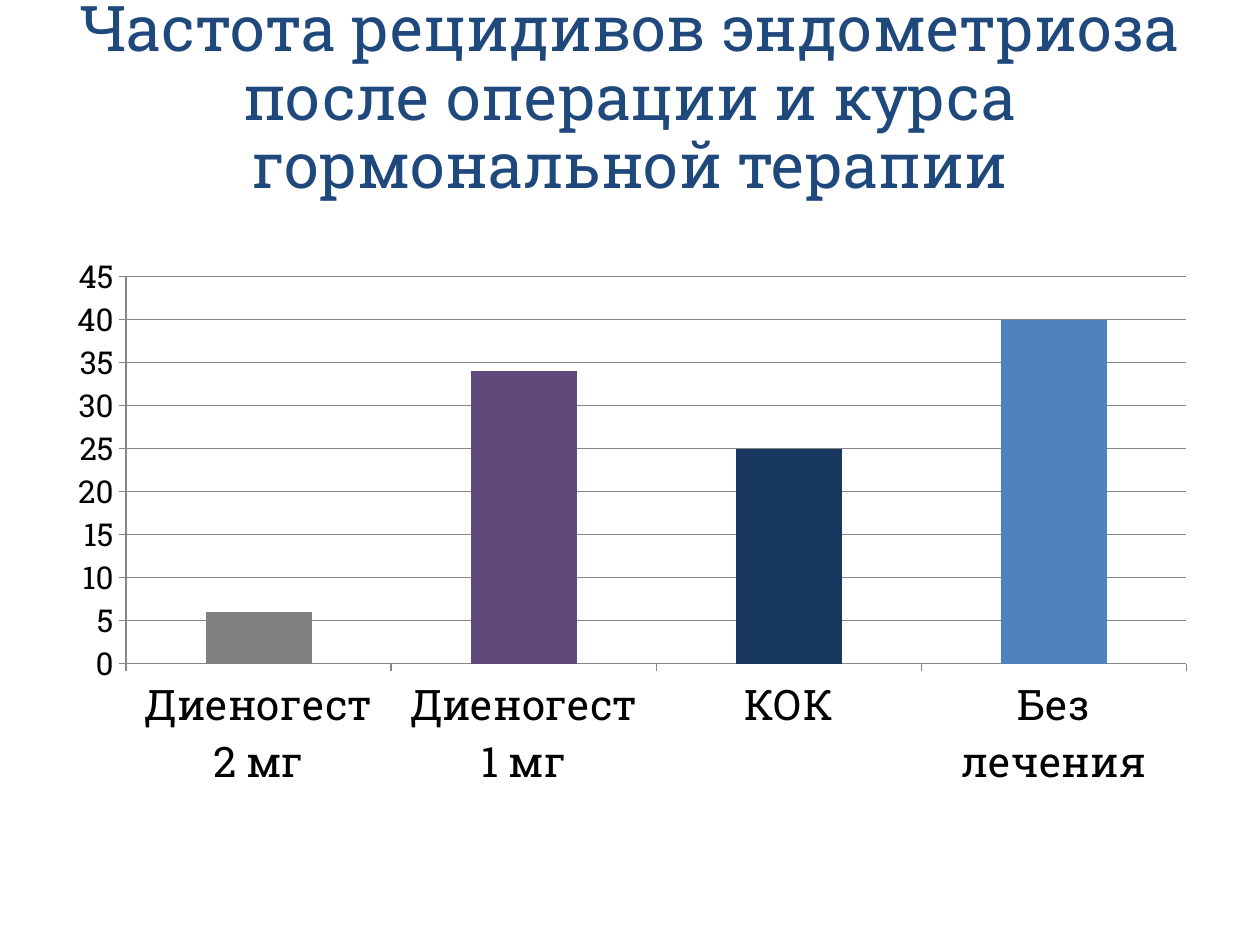
import pptx
import pptx.chart.data
import pptx.dml.color
import pptx.enum.chart
import pptx.enum.text
import pptx.util

Pt = pptx.util.Pt
FONT = "Roboto Slab"


def color(hex_value):
    return pptx.dml.color.RGBColor.from_string(hex_value)


def set_font(font, size, hex_value):
    for name, value in {"name": FONT, "size": Pt(size), "bold": False}.items():
        setattr(font, name, value)
    font.color.rgb = color(hex_value)


deck = pptx.Presentation()
deck.slide_width, deck.slide_height = Pt(720), Pt(540)
slide = deck.slides.add_slide(deck.slide_layouts[6])

# Title
title = slide.shapes.add_textbox(Pt(0), Pt(13.7), Pt(720), Pt(86.4)).text_frame
title_format = {
    "word_wrap": True,
    "auto_size": pptx.enum.text.MSO_AUTO_SIZE.NONE,
    "vertical_anchor": pptx.enum.text.MSO_ANCHOR.MIDDLE,
}
for name, value in title_format.items():
    setattr(title, name, value)
heading = title.paragraphs[0]
heading.alignment = pptx.enum.text.PP_ALIGN.CENTER
heading.line_spacing = 0.91
heading_run = heading.add_run()
heading_run.text = "Частота рецидивов эндометриоза после операции и курса гормональной терапии"
set_font(heading_run.font, 36, "1F497D")

# Recurrence rate by treatment
treatments = {
    "Диеногест 2 мг": (6, "808080"),
    "Диеногест 1 мг": (34, "604A7B"),
    "КОК": (25, "17375E"),
    "Без лечения": (40, "4F81BD"),
}
recurrence = pptx.chart.data.CategoryChartData()
recurrence.categories = list(treatments)
recurrence.add_series("Series 1", [rate for rate, _ in treatments.values()])
chart = slide.shapes.add_chart(
    pptx.enum.chart.XL_CHART_TYPE.COLUMN_CLUSTERED,
    Pt(31), Pt(139.7), Pt(660.2), Pt(317.5), recurrence,
).chart
chart.has_legend = False
chart.has_title = False
set_font(chart.font, 18, "000000")

bars = chart.plots[0]
bars.gap_width = 150
bars.vary_by_categories = False
rates = bars.series[0]
rates.format.fill.solid()
rates.format.fill.fore_color.rgb = color("4F81BD")
for index, (_, bar_color) in enumerate(treatments.values()):
    bar_fill = rates.points[index].format.fill
    bar_fill.solid()
    bar_fill.fore_color.rgb = color(bar_color)

tick_marks = pptx.enum.chart.XL_TICK_MARK
axis_format = {
    "major_tick_mark": tick_marks.OUTSIDE,
    "minor_tick_mark": tick_marks.NONE,
}
for axis, label_size in ((chart.category_axis, 24), (chart.value_axis, 18)):
    for name, value in axis_format.items():
        setattr(axis, name, value)
    axis.format.line.color.rgb = color("868686")
    axis.format.line.width = Pt(0.75)
    set_font(axis.tick_labels.font, label_size, "000000")

scale = {
    "minimum_scale": 0,
    "maximum_scale": 45,
    "major_unit": 5,
    "has_major_gridlines": True,
}
for name, value in scale.items():
    setattr(chart.value_axis, name, value)
gridline = chart.value_axis.major_gridlines.format.line
gridline.color.rgb = color("868686")
gridline.width = Pt(0.75)

deck.save("out.pptx")
